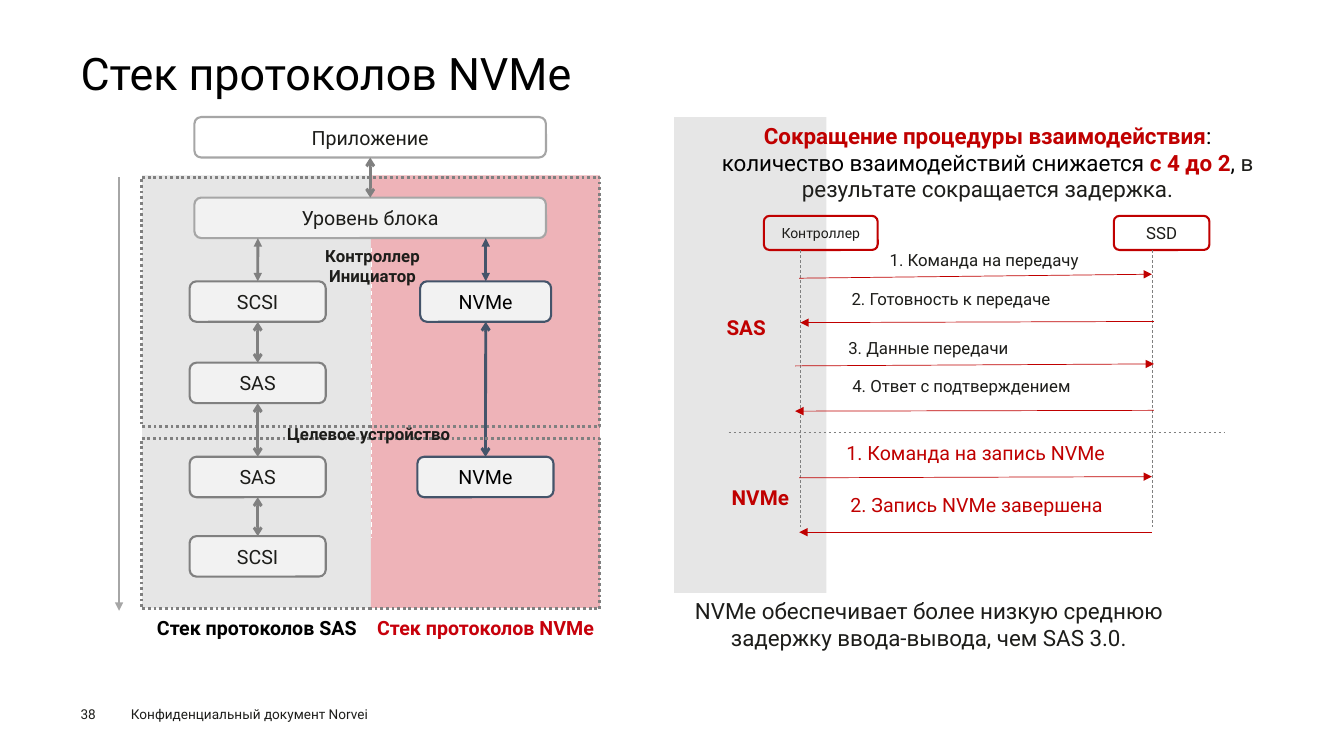
from lxml import etree
from pptx import Presentation
from pptx.dml.color import RGBColor
from pptx.enum.dml import MSO_LINE_DASH_STYLE as DASH
from pptx.enum.shapes import MSO_CONNECTOR, MSO_SHAPE as SHAPE
from pptx.enum.text import MSO_ANCHOR as ANCHOR, PP_ALIGN as ALIGN
from pptx.oxml.ns import qn
from pptx.util import Cm, Pt

FONT = "Roboto"
BLACK = RGBColor(0x00, 0x00, 0x00)
WHITE = RGBColor(0xFF, 0xFF, 0xFF)
INK = RGBColor(0x1D, 0x1D, 0x1A)
RED = RGBColor(0xC0, 0x00, 0x00)
CRIMSON = RGBColor(0xC7, 0x00, 0x0B)
PINK = RGBColor(0xEE, 0xB3, 0xB8)
PANEL = RGBColor(0xE6, 0xE6, 0xE6)
PALE = RGBColor(0xF2, 0xF2, 0xF2)
GREY = RGBColor(0x80, 0x80, 0x80)
SILVER = RGBColor(0xA6, 0xA6, 0xA6)
NAVY = RGBColor(0x44, 0x54, 0x6A)

prs = Presentation()
prs.slide_width, prs.slide_height = Cm(33.87), Cm(19.05)
slide = prs.slides.add_slide(prs.slide_layouts[5])
shapes = slide.shapes


def add_box(at, paragraphs=(), size=14, align=ALIGN.LEFT, margins=(0.25, 0.13),
            kind=None, fill=None, line=None, width=1.5, dash=None):
    """Add a shape, or a text box if kind is None; a run is (text, colour, bold)."""
    at = [Cm(v) for v in at]
    if kind is None:
        sp = shapes.add_textbox(*at)
    else:
        sp = shapes.add_shape(kind, *at)
        sp.shadow.inherit = False
        if fill is None:
            sp.fill.background()
        else:
            sp.fill.solid()
            sp.fill.fore_color.rgb = fill
        if line is None:
            sp.line.fill.background()
        else:
            sp.line.color.rgb, sp.line.width = line, Pt(width)
            sp.line.dash_style = dash
    tf = sp.text_frame
    x, y = (Cm(v) for v in margins)
    anchor = ANCHOR.TOP if kind is None else ANCHOR.MIDDLE
    frame_format = {"word_wrap": True, "vertical_anchor": anchor, "margin_left": x,
                    "margin_right": x, "margin_top": y, "margin_bottom": y}
    for name, value in frame_format.items():
        setattr(tf, name, value)
    for i, runs in enumerate(paragraphs):
        p = tf.add_paragraph() if i else tf.paragraphs[0]
        p.alignment = align
        for text, color, bold in runs:
            r = p.add_run()
            r.text = text
            r.font.color.rgb = color
            for name, value in {"name": FONT, "size": Pt(size), "bold": bold}.items():
                setattr(r.font, name, value)
    return sp


def add_line(x1, y1, x2, y2, color, width, dash=None, head=None, tail=None):
    """Add a straight line; head is the arrowhead at its start, tail at its end."""
    line = shapes.add_connector(MSO_CONNECTOR.STRAIGHT, Cm(x1), Cm(y1), Cm(x2), Cm(y2))
    line.line.color.rgb, line.line.width = color, Pt(width)
    line.line.dash_style = dash
    ln = line.line._get_or_add_ln()
    for tag, arrow in (("a:headEnd", head), ("a:tailEnd", tail)):
        if arrow:
            etree.SubElement(ln, qn(tag), type=arrow)
    etree.SubElement(line._element.spPr, qn("a:effectLst"))
    return line


# Title and footer
title = shapes.title
title.left, title.top, title.width, title.height = Cm(2.03), Cm(1.24), Cm(29.79), Cm(1.37)
tf = title.text_frame
tf.text = "Стек протоколов NVMe"
for name in ("margin_left", "margin_right", "margin_top", "margin_bottom"):
    setattr(tf, name, 0)
tf.vertical_anchor = ANCHOR.MIDDLE
p = tf.paragraphs[0]
p.alignment, p.line_spacing = ALIGN.LEFT, 0.9
p.font.color.rgb = BLACK
for name, value in {"name": FONT, "size": Pt(32), "bold": False}.items():
    setattr(p.font, name, value)

add_box((3.05, 17.65, 7.04, 0.66), [[("Конфиденциальный документ Norvei", INK, False)]], 9.7)
add_box((2.03, 17.78, 1.4, 0.41), [[("38", INK, False)]], 9.7, margins=(0, 0))

# Message exchange
add_box((16.99, 2.95, 3.84, 11.99), kind=SHAPE.RECTANGLE, fill=PANEL)
add_box((18.16, 3.07, 13.46, 2.46), [[
    ("Сокращение процедуры взаимодействия", RED, True),
    (": количество взаимодействий снижается ", BLACK, False),
    ("с 4 до 2", RED, True),
    (", ", BLACK, False),
    ("в результате сокращается задержка.", INK, False),
]], 16, ALIGN.CENTER, (0, 0))

for left, width, text, size in ((19.25, 2.87, "Контроллер", 10), (28.07, 2.41, "SSD", 12)):
    add_box((left, 5.44, width, 0.86), [[(text, INK, False)]], size, ALIGN.CENTER,
            (0.33, 0.18), SHAPE.ROUNDED_RECTANGLE, line=RED)

for left, top, width, text, size, color, bold in (
    (22.17, 6.17, 5.69, "1. Команда на передачу", 12, INK, False),
    (21.21, 7.14, 5.97, "2. Готовность к передаче", 12, INK, False),
    (21.13, 8.38, 5.13, "3. Данные передачи", 12, INK, False),
    (21.23, 9.35, 7.57, "4. Ответ с подтверждением", 12, INK, False),
    (21.08, 10.97, 7.49, "1. Команда на запись NVMe", 14, RED, False),
    (21.18, 12.29, 7.77, "2. Запись NVMe завершена", 14, RED, False),
    (18.06, 7.8, 3.96, "SAS", 14.7, RED, True),
    (18.19, 12.09, 3.96, "NVMe", 14.7, RED, True),
):
    add_box((left, top, width, 0.86), [[(text, color, bold)]], size)

for lifeline in (20.17, 29.03):
    add_line(lifeline, 6.3, lifeline, 13.28, GREY, 0.5, DASH.DASH)
add_line(18.36, 10.9, 30.86, 10.9, GREY, 0.5, DASH.DASH)

for message in (
    (20.14, 7.01, 29.03, 6.91),
    (29.08, 8.1, 20.17, 8.13),
    (20.04, 9.22, 29.08, 9.17),
    (29.08, 10.34, 20.04, 10.36),
    (20.14, 12.04, 29.03, 12.01),
    (29.03, 13.41, 20.14, 13.41),
):
    add_line(*message, RED, 0.5, tail="triangle")

conclusion = "NVMe обеспечивает более низкую среднюю задержку ввода-вывода, чем SAS 3.0."
add_box((17.48, 15.06, 11.86, 1.37), [[(conclusion, INK, False)]], 16, ALIGN.CENTER, (0, 0))

# Protocol stacks
for left, fill in ((3.58, PANEL), (9.35, PINK)):
    add_box((left, 4.42, 5.77, 10.9), kind=SHAPE.RECTANGLE, fill=fill)
for left, width, text, color in ((3.12, 6.71, "Стек протоколов SAS", BLACK),
                                 (9.19, 6.1, "Стек протоколов NVMe", CRIMSON)):
    add_box((left, 15.39, width, 0.86), [[(text, color, True)]], 14, ALIGN.CENTER)

layers = []
for left, top, width, text, color, fill, line in (
    (4.9, 2.95, 8.86, "Приложение", INK, None, SILVER),
    (4.9, 4.98, 8.86, "Уровень блока", INK, PALE, SILVER),
    (4.78, 7.09, 3.43, "SCSI", INK, PALE, GREY),
    (4.78, 9.14, 3.43, "SAS", INK, PALE, GREY),
    (4.78, 11.51, 3.43, "SAS", INK, PALE, GREY),
    (4.78, 13.51, 3.43, "SCSI", INK, PALE, GREY),
    (10.59, 7.09, 3.3, "NVMe", BLACK, PALE, NAVY),
    (10.52, 11.51, 3.43, "NVMe", BLACK, PALE, NAVY),
):
    layers.append(add_box((left, top, width, 1.02), [[(text, color, False)]], 14, ALIGN.CENTER,
                          (0.33, 0.18), SHAPE.ROUNDED_RECTANGLE, fill, line))
app, block, scsi, sas, target_sas, target_scsi, nvme, target_nvme = layers

for upper, lower, color in (
    (app, block, GREY),
    (scsi, sas, GREY),
    (sas, target_sas, GREY),
    (target_sas, target_scsi, GREY),
    (nvme, target_nvme, NAVY),
):
    link = add_line(0, 0, 1, 1, color, 2, head="arrow", tail="arrow")
    link.begin_connect(upper, 2)
    link.end_connect(lower, 0)
for lower, x, color in ((scsi, 6.5, GREY), (nvme, 12.24, NAVY)):
    link = add_line(x, 7.09, x, 6, color, 2, head="triangle", tail="triangle")
    link.begin_connect(lower, 0)

for top, height in ((4.47, 6.27), (11.05, 4.29)):
    add_box((3.56, top, 11.56, height), kind=SHAPE.RECTANGLE, line=GREY, width=2,
            dash=DASH.ROUND_DOT)
add_line(9.35, 6.25, 9.35, 13.56, WHITE, 0.75, DASH.DASH)
add_line(3, 4.47, 3, 15.39, SILVER, 1.5, tail="triangle")
add_box((7.37, 6.05, 4.04, 1.91), [[("Контроллер", INK, True)], [("Инициатор", INK, True)]],
        12, ALIGN.CENTER)
add_box((6.76, 10.54, 5.07, 1.27), [[("Целевое устройство", INK, True)]], 12, ALIGN.CENTER)

prs.save("out.pptx")
